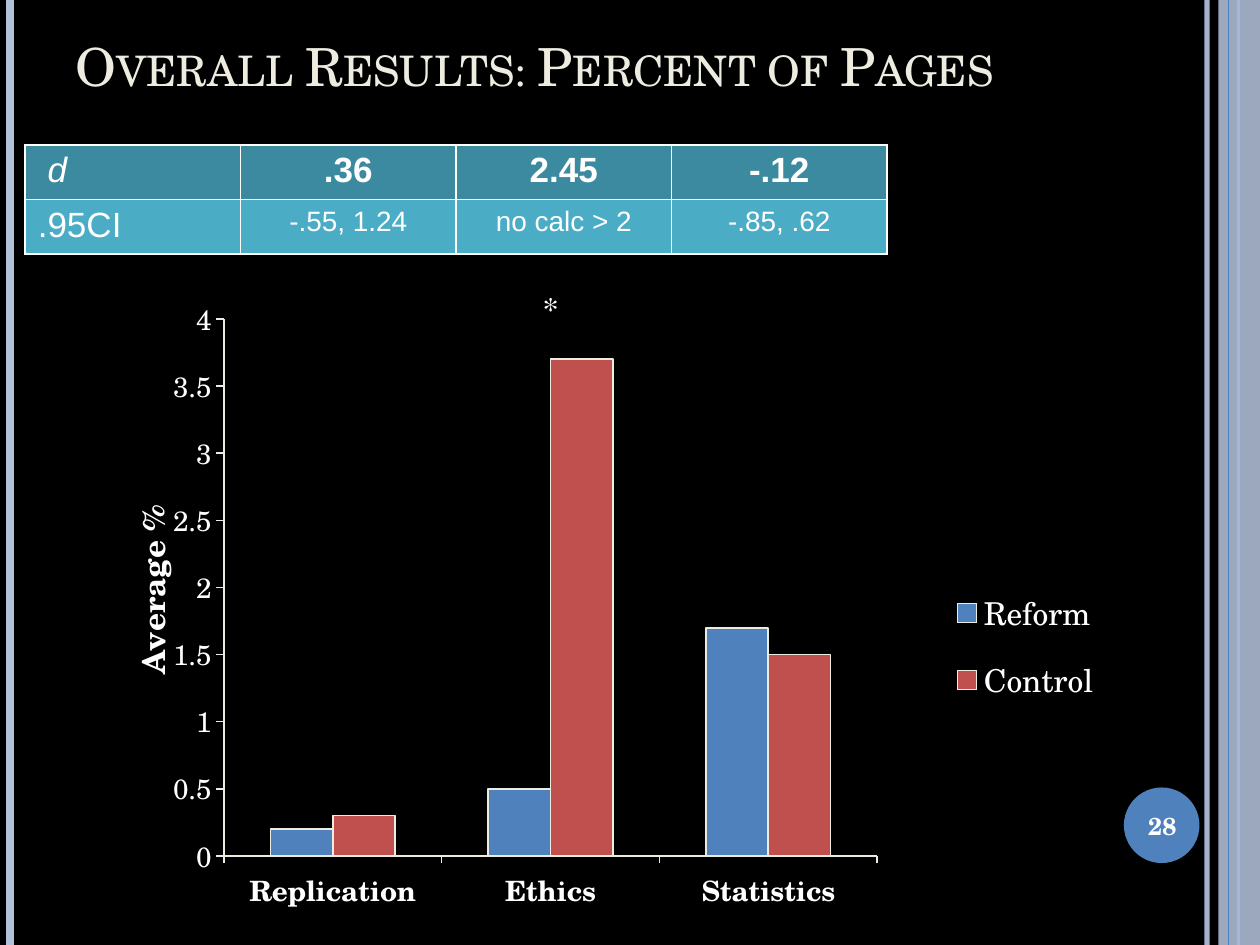
from dataclasses import dataclass

from lxml.etree import SubElement
from pptx import Presentation
from pptx.chart.data import CategoryChartData
from pptx.dml.color import RGBColor
from pptx.enum.chart import XL_CHART_TYPE as ChartType
from pptx.enum.chart import XL_LEGEND_POSITION as LegendPosition
from pptx.enum.chart import XL_TICK_MARK as TickMark
from pptx.enum.shapes import MSO_CONNECTOR as Connector
from pptx.enum.shapes import MSO_SHAPE as ShapeType
from pptx.enum.text import MSO_ANCHOR as Anchor
from pptx.enum.text import PP_ALIGN as Align
from pptx.oxml import parse_xml
from pptx.oxml.ns import nsdecls, qn
from pptx.util import Inches, Pt

COLORS = {
    "background": "000000",
    "white": "FFFFFF",
    "cream": "EEECE1",
    "pale": "B3C1DB",
    "blue": "4F81BD",
    "red": "C0504D",
    "header": "3C8A9F",
    "body": "4BACC6",
}
SERIF = "TeX Gyre Schola"
SANS = "Arial"


@dataclass
class Stripe:
    x: float
    color: str
    weight: float
    alpha: int = 100


@dataclass
class Span:
    text: str
    size: float
    name: str = SERIF
    color: str = "white"
    bold: bool = False
    italic: bool = False


@dataclass
class Series:
    name: str
    values: tuple
    color: str


def rgb(color: str) -> RGBColor:
    return RGBColor.from_string(COLORS[color])


def style_font(font, span: Span) -> None:
    font.name, font.size = span.name, Pt(span.size)
    font.bold, font.italic = span.bold, span.italic
    font.color.rgb = rgb(span.color)


def write(para, *spans: Span, align=Align.LEFT) -> None:
    para.alignment = align
    for span in spans:
        run = para.add_run()
        run.text = span.text
        style_font(run.font, span)


def set_alpha(element, percent: int) -> None:
    color = next(element.iter(qn("a:srgbClr")))
    SubElement(color, qn("a:alpha")).set("val", str(percent * 1000))


def add_stripe(page, stripe: Stripe) -> None:
    x = Inches(stripe.x)
    line = page.shapes.add_connector(Connector.STRAIGHT, x, 0, x, Inches(7.5))
    line.line.color.rgb = rgb(stripe.color)
    line.line.width = Pt(stripe.weight)
    SubElement(line._element.spPr, qn("a:effectLst"))
    if stripe.alpha < 100:
        set_alpha(line._element.spPr, stripe.alpha)


def add_panel(page, kind, at: tuple, color: str):
    panel = page.shapes.add_shape(kind, *map(Inches, at))
    panel.shadow.inherit = False
    panel.fill.solid()
    panel.fill.fore_color.rgb = rgb(color)
    panel.line.fill.background()
    return panel


def add_text(page, at: tuple, span: Span, align=Align.LEFT, anchor=Anchor.TOP, wrap=True):
    box = page.shapes.add_textbox(*map(Inches, at))
    box.text_frame.word_wrap = wrap
    box.text_frame.vertical_anchor = anchor
    write(box.text_frame.paragraphs[0], span, align=align)
    return box


def add_effect_table(page) -> None:
    rows = [
        ("header", [".36", "2.45", "-.12"], 20, True),
        ("body", ["-.55, 1.24", "no calc > 2", "-.85, .62"], 16, False),
    ]
    labels = [
        [Span(" ", 20, SANS), Span("d", 20, SANS, italic=True)],
        [Span(".95CI", 20, SANS)],
    ]
    table = page.shapes.add_table(
        2, 4, Inches(0.2), Inches(1.15), Inches(6.84), Inches(0.82)
    ).table
    for r, ((fill, texts, size, bold), label) in enumerate(zip(rows, labels)):
        values = [[Span(text, size, SANS, bold=bold)] for text in texts]
        for c, spans in enumerate([label, *values]):
            cell = table.cell(r, c)
            cell.fill.solid()
            cell.fill.fore_color.rgb = rgb(fill)
            write(cell.text_frame.paragraphs[0], *spans, align=Align.CENTER if c else Align.LEFT)


def place(parent, index: int, inner: bool = False, **lengths: float) -> None:
    for old in parent.findall(qn("c:layout")):
        parent.remove(old)
    target = '<c:layoutTarget val="inner"/>' if inner else ""
    modes = "".join(f'<c:{key}Mode val="edge"/>' for key in "xy")
    sizes = "".join(f'<c:{key} val="{value}"/>' for key, value in lengths.items())
    parent.insert(index, parse_xml(
        f"<c:layout {nsdecls('c')}><c:manualLayout>{target}{modes}{sizes}"
        "</c:manualLayout></c:layout>"
    ))


def add_results_chart(page) -> None:
    groups = [
        Series("Reform", (0.2, 0.5, 1.7), "blue"),
        Series("Control", (0.3, 3.7, 1.5), "red"),
    ]
    data = CategoryChartData(number_format="General")
    data.categories = ["Replication", "Ethics", "Statistics"]
    for group in groups:
        data.add_series(group.name, group.values)
    chart = page.shapes.add_chart(
        ChartType.COLUMN_CLUSTERED, *map(Inches, (0.5, 2.33, 8.99, 4.96)), data
    ).chart
    style_font(chart.font, Span("", 18))
    chart.has_title = False

    plot = chart.plots[0]
    plot.gap_width, plot.overlap, plot.vary_by_categories = 150, 0, False
    for series, group in zip(plot.series, groups):
        series.format.fill.solid()
        series.format.fill.fore_color.rgb = rgb(group.color)
        series.format.line.color.rgb = rgb("cream")
        series.format.line.width = Pt(1)

    for axis, bold in ((chart.category_axis, True), (chart.value_axis, False)):
        axis.has_major_gridlines = False
        axis.major_tick_mark, axis.minor_tick_mark = TickMark.OUTSIDE, TickMark.NONE
        axis.format.line.color.rgb = rgb("cream")
        axis.format.line.width = Pt(1)
        style_font(axis.tick_labels.font, Span("", 16, bold=bold))

    scale = chart.value_axis
    scale.minimum_scale, scale.maximum_scale, scale.major_unit = 0, 4, 0.5
    write(
        scale.axis_title.text_frame.paragraphs[0],
        Span("Average %", 18, bold=True), align=Align.CENTER,
    )

    chart.has_legend = True
    chart.legend.position = LegendPosition.RIGHT
    chart.legend.include_in_layout = False
    style_font(chart.legend.font, Span("", 18))

    place(chart._chartSpace.chart.plotArea, 0, inner=True, x=0.142, y=0.041, w=0.577, h=0.859)
    place(scale.axis_title._element, 1, x=0.05, y=0.33)
    place(chart.legend._element, 1, x=0.76, y=0.44, w=0.18, h=0.25)


def main() -> None:
    deck = Presentation()
    deck.slide_width, deck.slide_height = Inches(10), Inches(7.5)
    page = deck.slides.add_slide(deck.slide_layouts[6])
    page.background.fill.solid()
    page.background.fill.fore_color.rgb = rgb("background")

    for stripe in (
        Stripe(9.58, "pale", 3, 93), Stripe(0.08, "pale", 4.5), Stripe(9.83, "blue", 1.5)
    ):
        add_stripe(page, stripe)
    band = add_panel(page, ShapeType.RECTANGLE, (9.67, 0, 0.33, 7.5), "pale")
    set_alpha(band._element.spPr, 87)
    add_stripe(page, Stripe(9.75, "blue", 0.75))
    add_panel(page, ShapeType.OVAL, (8.92, 6.25, 0.6, 0.6), "blue")

    title = add_text(
        page, (0.5, 0.13, 8.17, 0.69),
        Span("Overall Results: Percent of Pages", 30, color="cream"), anchor=Anchor.BOTTOM,
    )
    title.text_frame.paragraphs[0].runs[0].font._element.set("cap", "small")
    add_results_chart(page)
    add_text(
        page, (8.89, 6.27, 0.67, 0.57), Span("28", 14, bold=True), Align.CENTER, Anchor.MIDDLE
    )
    add_effect_table(page)
    add_text(page, (4.21, 2.25, 0.33, 0.4), Span("*", 18), wrap=False)
    deck.save("out.pptx")


if __name__ == "__main__":
    main()
